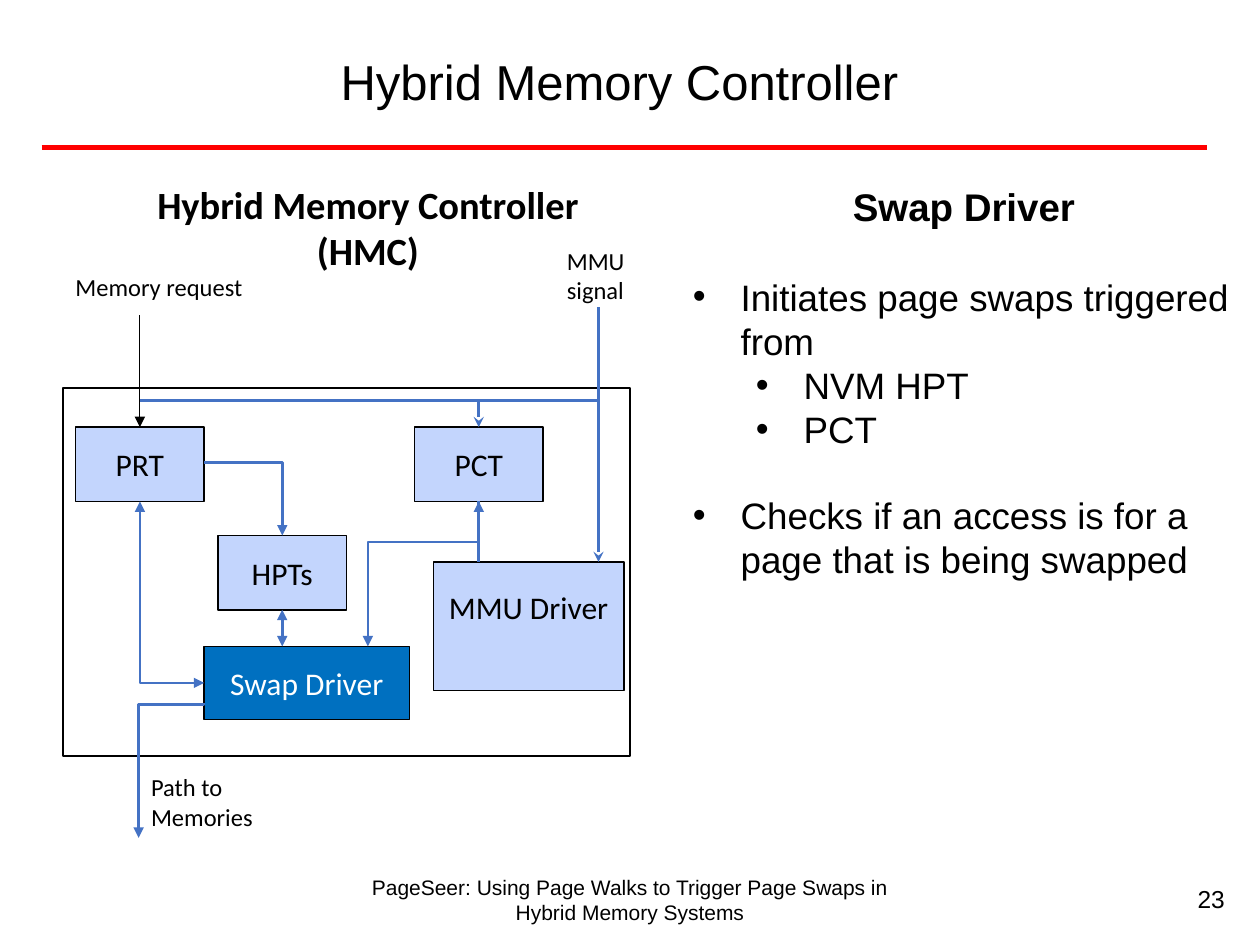
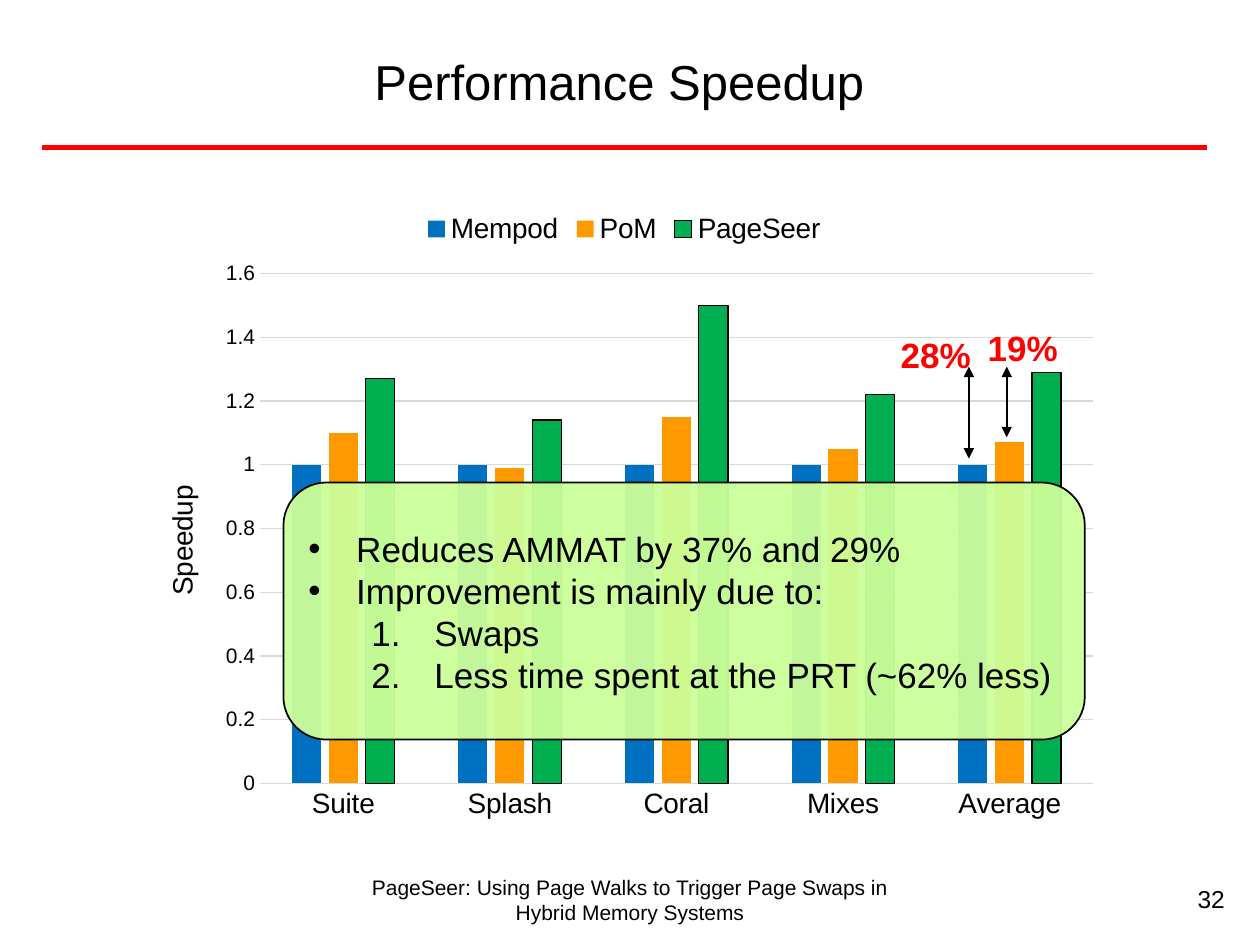
"""Build two PageSeer slides: the swap driver diagram and the speedup chart."""
import pptx
import pptx.chart.data
import pptx.dml.color
import pptx.enum.chart
import pptx.enum.shapes
import pptx.enum.text
import pptx.oxml
import pptx.oxml.ns
import pptx.util

WIDTH, HEIGHT = 10, 7.5
COLORS = {"black": "000000", "white": "FFFFFF", "red": "FF0000", "pale": "C3D5FD",
          "wire": "4472C4", "blue": "0070C0", "orange": "FF9900", "green": "00B050",
          "note": "CCFF99", "grid": "D9D9D9"}
FOOTER = "PageSeer: Using Page Walks to Trigger Page Swaps in Hybrid Memory Systems"

FRAME = (0.5, 3.08, 4.5, 2.92)
UNIT_W, UNIT_H, UNIT_TOP = 1.02, 0.59, 3.39
BOXES = {
    "PRT": (0.6, UNIT_TOP, UNIT_W, UNIT_H, "pale", "black"),
    "HPTs": (1.73, 4.25, UNIT_W, UNIT_H, "pale", "black"),
    "PCT": (3.29, UNIT_TOP, UNIT_W, UNIT_H, "pale", "black"),
    "MMU Driver": (3.44, 4.46, 1.51, 1.02, "pale", "black"),
    "Swap Driver": (1.62, 5.13, 1.63, 0.58, "blue", "white"),
}
LABELS = [
    ("Memory request", (0.5, 2.11, 1.69, 0.34), 14, False),
    ("MMU signal", (4.4, 1.9, 0.69, 0.57), 14, False),
    ("Path to Memories", (1.1, 6.08, 1.05, 0.57), 14, False),
    ("Hybrid Memory Controller (HMC)", (0.93, 1.39, 3.98, 0.84), 22, True),
]
SWAP_POINTS = [
    (0, "Initiates page swaps triggered from", 26),
    (1, "NVM HPT", 0),
    (1, "PCT", 0),
    (0, "Checks if an access is for a page that is being swapped", 24),
]
NOTE_POINTS = [
    (0, "Reduces AMMAT by 37% and 29%", 0),
    (0, "Improvement is mainly due to:", 0),
    (1, "Swaps", 0),
    (1, "Less time spent at the PRT (~62% less)", 0),
]
GROUPS = ["Suite", "Splash", "Coral", "Mixes", "Average"]
SPEEDUPS = {
    "Mempod": ("blue", [1, 1, 1, 1, 1]),
    "PoM": ("orange", [1.1, 0.99, 1.15, 1.05, 1.07]),
    "PageSeer": ("green", [1.27, 1.14, 1.5, 1.22, 1.29]),
}
PLOT_SHARES = {"x": 0.127, "y": 0.118, "w": 0.853, "h": 0.808}
GAINS = [("28%", (7.05, 2.6), 7.69, 3.64), ("19%", (7.74, 2.54), 7.99, 3.47)]


def inches(*values):
    return [pptx.util.Inches(v) for v in values]


def rgb(name):
    return pptx.dml.color.RGBColor.from_string(COLORS[name])


def set_font(font, size, color="black", name="Arial", bold=False):
    font.size = pptx.util.Pt(size)
    font.name = name
    font.bold = bold
    font.color.rgb = rgb(color)


def sub(parent, tag, **attrs):
    el = pptx.oxml.parse_xml(f"<{tag} {pptx.oxml.ns.nsdecls(tag.split(':')[0])}/>")
    for key, value in attrs.items():
        el.set(key, str(value))
    parent.append(el)
    return el


def add_run(p, text, size, color="black", name="Arial", bold=False, align="LEFT"):
    p.alignment = getattr(pptx.enum.text.PP_ALIGN, align)
    r = p.add_run()
    r.text = text
    set_font(r.font, size, color, name, bold)


def add_text(slide, box, text, size, **style):
    tf = slide.shapes.add_textbox(*inches(*box)).text_frame
    tf.word_wrap = True
    add_run(tf.paragraphs[0], text, size, **style)
    return tf


def add_points(tf, points, size, nested, numbered=False):
    for level, text, gap in points:
        p = tf.paragraphs[0] if not tf.paragraphs[0].runs else tf.add_paragraph()
        p.level = level
        margin, hanging = nested if level else (0.38, 0.38)
        pPr = p._p.get_or_add_pPr()
        pPr.set("marL", str(pptx.util.Inches(margin)))
        pPr.set("indent", str(-pptx.util.Inches(hanging)))
        sub(pPr, "a:buFont", typeface="Arial")
        if numbered and level:
            sub(pPr, "a:buAutoNum", type="arabicPeriod")
        else:
            sub(pPr, "a:buChar", char="•")
        if gap:
            p.space_before = pptx.util.Pt(gap)
        add_run(p, text, size)


def add_box(slide, box, fill, preset="RECTANGLE"):
    sp = slide.shapes.add_shape(getattr(pptx.enum.shapes.MSO_SHAPE, preset), *inches(*box))
    sp.shadow.inherit = False
    sp.fill.solid()
    sp.fill.fore_color.rgb = rgb(fill)
    sp.line.color.rgb = rgb("black")
    sp.line.width = pptx.util.Pt(1)
    sp.text_frame.vertical_anchor = pptx.enum.text.MSO_ANCHOR.MIDDLE
    return sp


def add_line(slide, start, end, color="wire", width=1.5, head=None, tail=None, kind="STRAIGHT"):
    kind = getattr(pptx.enum.shapes.MSO_CONNECTOR, kind)
    line = slide.shapes.add_connector(kind, *inches(*start, *end))
    line.line.color.rgb = rgb(color)
    line.line.width = pptx.util.Pt(width)
    spPr = line.element.spPr
    ln = spPr.find(pptx.oxml.ns.qn("a:ln"))
    for tag, arrow in (("a:headEnd", head), ("a:tailEnd", tail)):
        if arrow:
            sub(ln, tag, type=arrow)
    sub(spPr, "a:effectLst")
    return line


def add_elbow(slide, start, end, preset, downward=True, bend=None, **style):
    """Draw an elbow that leaves its start downward or sideways."""
    line = add_line(slide, start, end, kind="ELBOW", **style)
    (x1, y1), (x2, y2) = start, end
    geom = line.element.spPr.find(pptx.oxml.ns.qn("a:prstGeom"))
    geom.set("prst", preset)
    if bend is not None:
        guides = geom.find(pptx.oxml.ns.qn("a:avLst"))
        if guides is None:
            guides = sub(geom, "a:avLst")
        sub(guides, "a:gd", name="adj1", fmla=f"val {round(bend * 100000)}")
    if downward:
        across, down = abs(x2 - x1), abs(y2 - y1)
        line.left, line.top, line.width, line.height = inches(
            (x1 + x2 - down) / 2, (y1 + y2 - across) / 2, down, across)
        xfrm = line.element.spPr.find(pptx.oxml.ns.qn("a:xfrm"))
        rightward = x2 > x1
        xfrm.set("rot", str((270 if rightward else 90) * 60000))
        xfrm.set("flipH", str(int(rightward)))


def add_slide(prs, title, number):
    slide = prs.slides.add_slide(prs.slide_layouts[5])
    sp = slide.shapes.title
    sp.left, sp.top, sp.width, sp.height = inches(0.5, 0.1, 8.83, 1.08)
    sp.text_frame.vertical_anchor = pptx.enum.text.MSO_ANCHOR.MIDDLE
    add_run(sp.text_frame.paragraphs[0], title, 28, align="CENTER")
    add_line(slide, (0.33, 1.17), (9.58, 1.17), "red", 3.25)
    add_text(slide, (2.79, 6.89, 4.42, 0.74), FOOTER, 12, align="CENTER")
    add_text(slide, (7.49, 6.97, 2.33, 0.52), str(number), 14, align="RIGHT")
    return slide


def add_controller(prs):
    slide = add_slide(prs, "Hybrid Memory Controller", 23)
    add_box(slide, FRAME, "white")
    units = {}
    for name, (*box, fill, ink) in BOXES.items():
        units[name] = sp = add_box(slide, box, fill)
        sp.text_frame.word_wrap = True
        add_run(sp.text_frame.paragraphs[0], name, 18, ink, "Calibri", align="CENTER")
    units["MMU Driver"].text_frame.margin_bottom = pptx.util.Inches(0.35)
    for text, box, size, heading in LABELS:
        add_text(slide, box, text, size, name="Calibri", bold=heading,
                 align="CENTER" if heading else "LEFT")

    middle = {n: b[0] + b[2] / 2 for n, b in BOXES.items()}
    bottom = {n: b[1] + b[3] for n, b in BOXES.items()}
    prt_x, hpt_x, pct_x = (middle[n] for n in ("PRT", "HPTs", "PCT"))
    swap_left, swap_top = BOXES["Swap Driver"][:2]
    signal_x, bus_y, mmu_top = 4.75, 3.18, BOXES["MMU Driver"][1]

    line = add_line(slide, (prt_x, 2.5), (prt_x, UNIT_TOP), "black", 0.5, tail="triangle")
    line.end_connect(units["PRT"], 0)
    add_line(slide, (signal_x, 2.44), (signal_x, mmu_top), tail="stealth")
    add_line(slide, (prt_x, bus_y), (signal_x, bus_y))
    line = add_line(slide, (pct_x, bus_y), (pct_x, UNIT_TOP), tail="stealth")
    line.end_connect(units["PCT"], 0)
    line = add_line(slide, (pct_x, mmu_top), (pct_x, bottom["PCT"]), tail="triangle")
    line.end_connect(units["PCT"], 2)
    line = add_line(slide, (hpt_x, bottom["HPTs"]), (hpt_x, swap_top),
                    head="triangle", tail="triangle")
    line.begin_connect(units["HPTs"], 2)
    add_elbow(slide, (BOXES["PRT"][0] + UNIT_W, 3.67), (hpt_x, BOXES["HPTs"][1]),
              "bentConnector2", downward=False, tail="triangle")
    add_elbow(slide, (pct_x, bottom["PCT"]), (2.92, swap_top),
              "bentConnector3", bend=0.28, tail="triangle")
    add_elbow(slide, (prt_x, bottom["PRT"]), (swap_left, 5.42),
              "bentConnector2", head="triangle", tail="triangle")
    add_elbow(slide, (swap_left, 5.58), (1.1, 6.65),
              "bentConnector3", bend=0.01, tail="triangle")

    tf = add_text(slide, (5.4, 1.4, 4.5, 3.32), "Swap Driver", 22, bold=True, align="CENTER")
    add_points(tf, SWAP_POINTS, 21, (0.88, 0.38))


def add_speedup_chart(slide):
    data = pptx.chart.data.CategoryChartData()
    data.categories = GROUPS
    for name, (_, values) in SPEEDUPS.items():
        data.add_series(name, values)
    chart = slide.shapes.add_chart(pptx.enum.chart.XL_CHART_TYPE.COLUMN_CLUSTERED,
                                   *inches(1.08, 1.58, 7.75, 5.01), data).chart
    set_font(chart.font, 10)
    chart.has_title = False
    chart.has_legend = True
    chart.legend.position = pptx.enum.chart.XL_LEGEND_POSITION.TOP
    chart.legend.include_in_layout = False
    set_font(chart.legend.font, 16)

    plot = chart.plots[0]
    plot.gap_width, plot.overlap = 219, -27
    plot.vary_by_categories = False
    for series, (color, _) in zip(plot.series, SPEEDUPS.values()):
        series.format.fill.solid()
        series.format.fill.fore_color.rgb = rgb(color)
    series.format.line.color.rgb = rgb("black")
    series.format.line.width = pptx.util.Pt(0.75)

    cat, val = chart.category_axis, chart.value_axis
    for axis, size in ((cat, 16), (val, 12)):
        axis.major_tick_mark = pptx.enum.chart.XL_TICK_MARK.NONE
        set_font(axis.tick_labels.font, size)
    val.minimum_scale, val.maximum_scale, val.major_unit = 0, 1.6, 0.2
    val.format.line.fill.background()
    for line in (cat.format.line, val.major_gridlines.format.line):
        line.color.rgb = rgb("grid")
        line.width = pptx.util.Pt(0.75)
    add_run(val.axis_title.text_frame.paragraphs[0], "Speedup", 16, align="CENTER")

    area = chart.element.find(".//" + pptx.oxml.ns.qn("c:plotArea"))
    layout = area.find(pptx.oxml.ns.qn("c:layout"))
    if layout is None:
        layout = sub(area, "c:layout")
        area.insert(0, layout)
    manual = sub(layout, "c:manualLayout")
    sub(manual, "c:layoutTarget", val="inner")
    for side in "xy":
        sub(manual, f"c:{side}Mode", val="edge")
    for side, share in PLOT_SHARES.items():
        sub(manual, f"c:{side}", val=share)


def add_performance(prs):
    slide = add_slide(prs, "Performance Speedup", 32)
    add_speedup_chart(slide)
    for text, corner, x, foot in GAINS:
        add_line(slide, (x, foot), (x, 2.91), "black", 1, head="triangle", tail="triangle")
        add_text(slide, (*corner, 0.88, 0.44), text, 20, color="red", bold=True)
    note = add_box(slide, (2.25, 3.83, 6.36, 2.04), "note", "ROUNDED_RECTANGLE")
    fill = note.element.spPr.find(pptx.oxml.ns.qn("a:solidFill"))
    sub(fill[0], "a:alpha", val=95000)
    note.text_frame.word_wrap = False
    add_points(note.text_frame, NOTE_POINTS, 20, (1, 0.5), numbered=True)


def main():
    prs = pptx.Presentation()
    prs.slide_width, prs.slide_height = inches(WIDTH, HEIGHT)
    add_controller(prs)
    add_performance(prs)
    prs.save("out.pptx")


if __name__ == "__main__":
    main()
